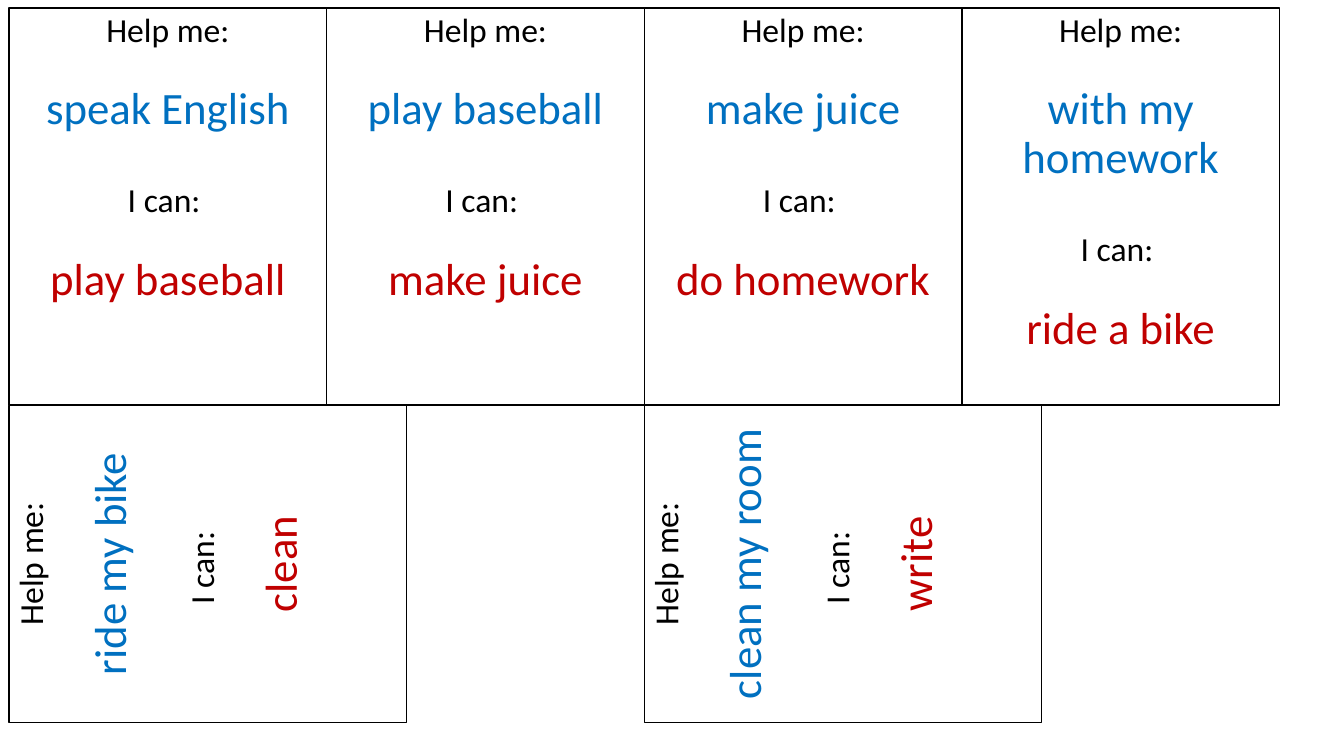
from pptx import Presentation
from pptx.dml.color import RGBColor
from pptx.enum import shapes, text
from pptx.util import Inches, Pt

BLACK = RGBColor(0x00, 0x00, 0x00)
WHITE = RGBColor(0xFF, 0xFF, 0xFF)
BLUE = RGBColor(0x00, 0x70, 0xC0)
RED = RGBColor(0xC0, 0x00, 0x00)

LEFT, TOP = 0.09, 0.08
CARD_W, CARD_H = 3.15, 3.94

UPRIGHT_CARDS = [
    ("speak English", "play baseball"),
    ("play baseball", "make juice"),
    ("make juice", "do homework"),
    ("with my homework", "ride a bike"),
]
TURNED_CARDS = [
    ("ride my bike", "clean"),
    ("clean my room", "write"),
]


def add_card(slide, left, top, need, skill, rotation=0):
    """Add a card whose unrotated box starts at left, top (inches)."""
    sp = slide.shapes.add_shape(
        shapes.MSO_SHAPE.RECTANGLE,
        Inches(left), Inches(top), Inches(CARD_W), Inches(CARD_H))
    sp.rotation = rotation
    sp.shadow.inherit = False
    sp.fill.solid()
    sp.fill.fore_color.rgb = WHITE
    sp.line.color.rgb = BLACK
    sp.line.width = Pt(1)

    tf = sp.text_frame
    tf.word_wrap = True
    tf.vertical_anchor = text.MSO_ANCHOR.TOP

    # Text, size, colour and space before each line
    lines = [
        ("Help me:", 24, BLACK, 0),
        (need, 32, BLUE, 26.4),
        ("I can: ", 24, BLACK, 35.2),
        (skill, 32, RED, 26.4),
    ]
    for i, (words, size, color, gap) in enumerate(lines):
        p = tf.paragraphs[0] if i == 0 else tf.add_paragraph()
        p.text = words
        p.alignment = text.PP_ALIGN.CENTER
        p.line_spacing = 0.9
        p.space_before = Pt(gap)
        font = p.runs[0].font
        font.name = "Calibri"
        font.size = Pt(size)
        font.color.rgb = color


def add_upright_row(slide, left, top):
    for i, (need, skill) in enumerate(UPRIGHT_CARDS):
        add_card(slide, left + i * CARD_W, top, need, skill)


def add_turned_row(slide, left, top):
    # A quarter turn swaps the sides around the card's centre
    shift = (CARD_H - CARD_W) / 2
    for i, (need, skill) in enumerate(TURNED_CARDS):
        add_card(slide, left + i * 2 * CARD_W + shift, top - shift,
                 need, skill, rotation=270)


def main():
    prs = Presentation()
    prs.slide_width = Inches(13.33)
    prs.slide_height = Inches(7.5)
    slide = prs.slides.add_slide(prs.slide_layouts[6])
    add_upright_row(slide, LEFT, TOP)
    add_turned_row(slide, LEFT, TOP + CARD_H)
    prs.save("out.pptx")


if __name__ == "__main__":
    main()
